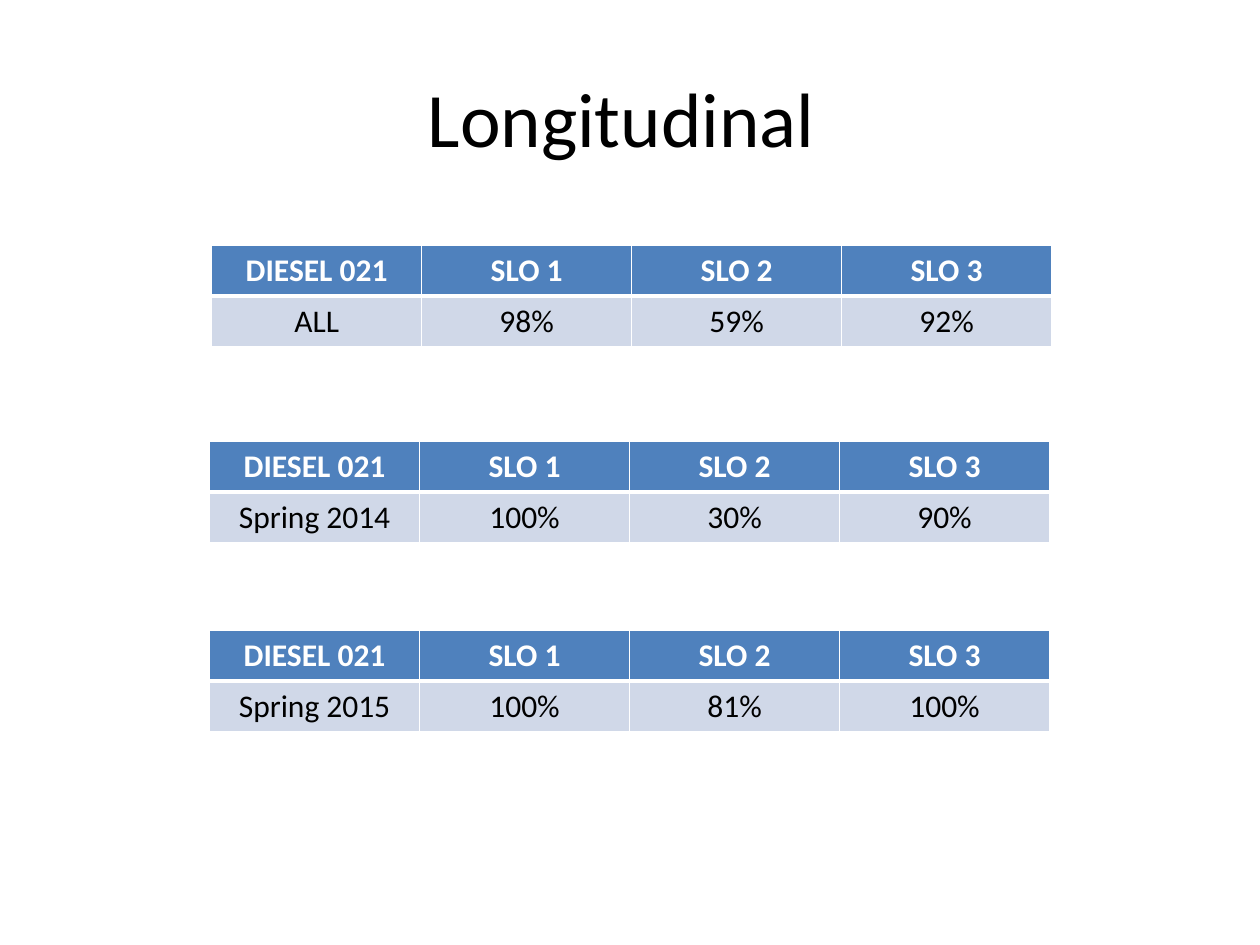
from dataclasses import dataclass

from lxml.etree import SubElement
from pptx import Presentation
from pptx.dml.color import RGBColor
from pptx.enum.text import MSO_ANCHOR, PP_ALIGN
from pptx.oxml.ns import qn
from pptx.util import Pt


@dataclass(frozen=True)
class Theme:
    font: str = "Calibri"
    title_size: int = 44
    cell_size: int = 18
    text: str = "000000"
    header_text: str = "FFFFFF"
    header_fill: str = "4F81BD"
    body_fill: str = "D0D8E8"
    border: str = "FFFFFF"
    thin_line: int = 1
    thick_line: int = 3


@dataclass(frozen=True)
class ResultTable:
    left: float
    top: float
    term: str
    scores: tuple[str, ...]


THEME = Theme()
HEADER = ("DIESEL 021", "SLO 1", "SLO 2", "SLO 3")
COLUMN_WIDTH = 120
ROW_HEIGHT = 29.2
RESULTS = (
    ResultTable(120.96, 140, "ALL", ("98%", "59%", "92%")),
    ResultTable(119.8, 252, "Spring 2014", ("100%", "30%", "90%")),
    ResultTable(119.8, 360, "Spring 2015", ("100%", "81%", "100%")),
)


def write(frame, text: str, size: int, color: str, bold: bool = False) -> None:
    para = frame.paragraphs[0]
    para.alignment = PP_ALIGN.CENTER
    span = para.add_run()
    span.text = text
    span.font.name = THEME.font
    span.font.size = Pt(size)
    span.font.bold = bold
    span.font.color.rgb = RGBColor.from_string(color)


def add_borders(cell, is_header: bool) -> None:
    # The edge between header and body is the thick one
    thick_edge = "lnB" if is_header else "lnT"
    properties = cell._tc.get_or_add_tcPr()
    for edge in ("lnL", "lnR", "lnT", "lnB"):
        width = THEME.thick_line if edge == thick_edge else THEME.thin_line
        line = SubElement(properties, qn(f"a:{edge}"), w=str(Pt(width)))
        fill = SubElement(line, qn("a:solidFill"))
        SubElement(fill, qn("a:srgbClr"), val=THEME.border)


def add_title(page, text: str) -> None:
    box = page.shapes.add_textbox(Pt(36), Pt(21.6), Pt(648), Pt(90))
    box.text_frame.word_wrap = True
    box.text_frame.vertical_anchor = MSO_ANCHOR.MIDDLE
    write(box.text_frame, text, THEME.title_size, THEME.text)


def add_results(page, result: ResultTable) -> None:
    rows = (HEADER, (result.term, *result.scores))
    table = page.shapes.add_table(
        len(rows), len(HEADER), Pt(result.left), Pt(result.top),
        Pt(COLUMN_WIDTH * len(HEADER)), Pt(ROW_HEIGHT * len(rows)),
    ).table
    for column in table.columns:
        column.width = Pt(COLUMN_WIDTH)
    for row_index, texts in enumerate(rows):
        table.rows[row_index].height = Pt(ROW_HEIGHT)
        is_header = row_index == 0
        fill = THEME.header_fill if is_header else THEME.body_fill
        color = THEME.header_text if is_header else THEME.text
        for column_index, text in enumerate(texts):
            cell = table.cell(row_index, column_index)
            add_borders(cell, is_header)
            cell.fill.solid()
            cell.fill.fore_color.rgb = RGBColor.from_string(fill)
            write(cell.text_frame, text, THEME.cell_size, color, is_header)


def main() -> None:
    deck = Presentation()
    deck.slide_width, deck.slide_height = Pt(720), Pt(540)
    page = deck.slides.add_slide(deck.slide_layouts[6])

    # Title
    add_title(page, "Longitudinal ")

    # One table per period
    for result in RESULTS:
        add_results(page, result)

    deck.save("out.pptx")


if __name__ == "__main__":
    main()
